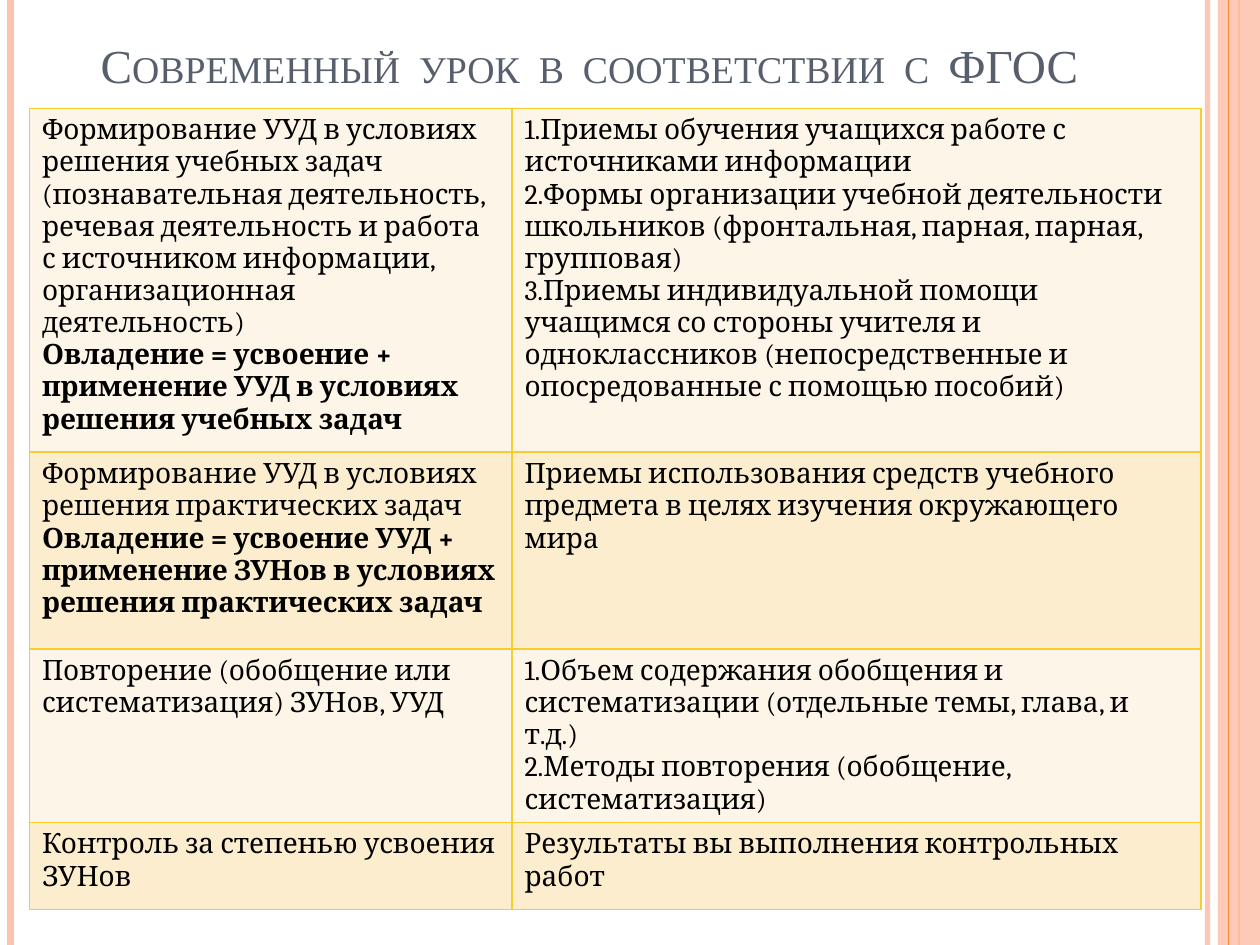
from dataclasses import dataclass

from lxml.etree import SubElement
from pptx import Presentation
from pptx.dml.color import RGBColor
from pptx.enum.shapes import MSO_CONNECTOR as Connector, MSO_SHAPE as Shape
from pptx.enum.text import MSO_ANCHOR as Anchor
from pptx.oxml.ns import qn
from pptx.util import Pt


@dataclass(frozen=True)
class Theme:
    peach: str = "FEC3AE"
    orange: str = "FE8637"
    title: str = "575F6D"
    text: str = "000000"
    border: str = "F5CD2D"
    bands: tuple = ("FDF6E8", "FBEDCD")
    title_font: str = "Times New Roman"
    body_font: str = "Cambria"
    title_size: int = 27
    body_size: int = 16


THEME = Theme()
WIDTH, HEIGHT = 720, 540

COLUMNS = (275.75, 393.85)
ROWS = (196.5, 112.5, 91.5, 49.7)
# Each cell is a list of paragraphs: (text, bold)
LESSONS = [
    ([("Формирование УУД в условиях решения учебных задач (познавательная "
       "деятельность, речевая деятельность и работа с источником информации, "
       "организационная деятельность)", False),
      ("Овладение = усвоение + применение УУД в условиях решения учебных задач", True)],
     [("1.Приемы обучения учащихся работе с источниками информации", False),
      ("2.Формы организации учебной деятельности школьников (фронтальная, "
       "парная, парная, групповая)", False),
      ("3.Приемы индивидуальной помощи учащимся со стороны учителя и "
       "одноклассников (непосредственные и опосредованные с помощью пособий)", False)]),
    ([("Формирование УУД в условиях решения практических задач", False),
      ("Овладение = усвоение УУД + применение ЗУНов в условиях решения "
       "практических задач", True)],
     [("Приемы использования средств учебного предмета в целях изучения "
       "окружающего мира", False)]),
    ([("Повторение (обобщение или систематизация) ЗУНов, УУД", False)],
     [("1.Объем содержания обобщения и систематизации (отдельные темы, глава, "
       "и т.д.)", False),
      ("2.Методы повторения (обобщение, систематизация)", False)]),
    ([("Контроль за степенью усвоения ЗУНов", False)],
     [("Результаты вы выполнения контрольных работ", False)]),
]


def rgb(color):
    return RGBColor.from_string(color)


def set_opacity(element, percent):
    for color in element.iter(qn("a:srgbClr")):
        SubElement(color, qn("a:alpha"), val=str(percent * 1000))


def format_run(r, font, size, color, bold=False):
    r.font.name = font
    r.font.size = Pt(size)
    r.font.bold = bold
    r.font.color.rgb = rgb(color)


def add_vertical_line(slide, x, width, color, opacity=100):
    line = slide.shapes.add_connector(Connector.STRAIGHT, Pt(x), 0, Pt(x), Pt(HEIGHT))
    line.line.width = Pt(width)
    line.line.color.rgb = rgb(color)
    sp_pr = line._element.spPr
    if opacity < 100:
        set_opacity(sp_pr, opacity)
    SubElement(sp_pr, qn("a:effectLst"))


def add_side_band(slide, x, color, opacity):
    band = slide.shapes.add_shape(Shape.RECTANGLE, Pt(x), 0, Pt(WIDTH - x), Pt(HEIGHT))
    band.shadow.inherit = False
    band.fill.solid()
    band.fill.fore_color.rgb = rgb(color)
    set_opacity(band._element.spPr, opacity)
    band.line.fill.background()


def add_title(slide, text):
    box = slide.shapes.add_textbox(Pt(50.4), Pt(16.6), Pt(602), Pt(40.3))
    tf = box.text_frame
    tf.word_wrap = True
    tf.vertical_anchor = Anchor.BOTTOM
    tf.text = text
    r = tf.paragraphs[0].runs[0]
    format_run(r, THEME.title_font, THEME.title_size, THEME.title)
    r.font._element.set("cap", "small")


def set_borders(cell, color, width):
    tc_pr = cell._tc.get_or_add_tcPr()
    for index, side in enumerate(("a:lnL", "a:lnR", "a:lnT", "a:lnB")):
        ln = tc_pr.makeelement(qn(side), {"w": str(Pt(width))})
        fill = SubElement(ln, qn("a:solidFill"))
        SubElement(fill, qn("a:srgbClr"), val=color)
        tc_pr.insert(index, ln)  # borders come before the fill


def fill_cell(cell, paragraphs, color):
    cell.fill.solid()
    cell.fill.fore_color.rgb = rgb(color)
    set_borders(cell, THEME.border, 1)
    tf = cell.text_frame
    tf.text = "\n".join(text for text, _ in paragraphs)
    for p, (_, bold) in zip(tf.paragraphs, paragraphs):
        format_run(p.runs[0], THEME.body_font, THEME.body_size, THEME.text, bold)


def add_lesson_table(slide):
    frame = slide.shapes.add_table(len(ROWS), len(COLUMNS), Pt(16.8), Pt(61.9),
                                   Pt(sum(COLUMNS)), Pt(sum(ROWS)))
    table = frame.table
    table.first_row = table.horz_banding = False
    for column, width in zip(table.columns, COLUMNS):
        column.width = Pt(width)
    for i, (row, height) in enumerate(zip(table.rows, ROWS)):
        row.height = Pt(height)
        for cell, paragraphs in zip(row.cells, LESSONS[i]):
            fill_cell(cell, paragraphs, THEME.bands[i % 2])


def main():
    prs = Presentation()
    prs.slide_width, prs.slide_height = Pt(WIDTH), Pt(HEIGHT)
    slide = prs.slides.add_slide(prs.slide_layouts[6])
    add_vertical_line(slide, 690, 3, THEME.peach, 93)
    add_vertical_line(slide, 6, 4.5, THEME.peach)
    add_vertical_line(slide, 708, 1.5, THEME.orange)
    add_side_band(slide, 696, THEME.peach, 87)
    add_vertical_line(slide, 702, 0.75, THEME.orange)
    add_lesson_table(slide)
    add_title(slide, "Современный  урок  в  соответствии  с  ФГОС")
    prs.save("out.pptx")


if __name__ == "__main__":
    main()
